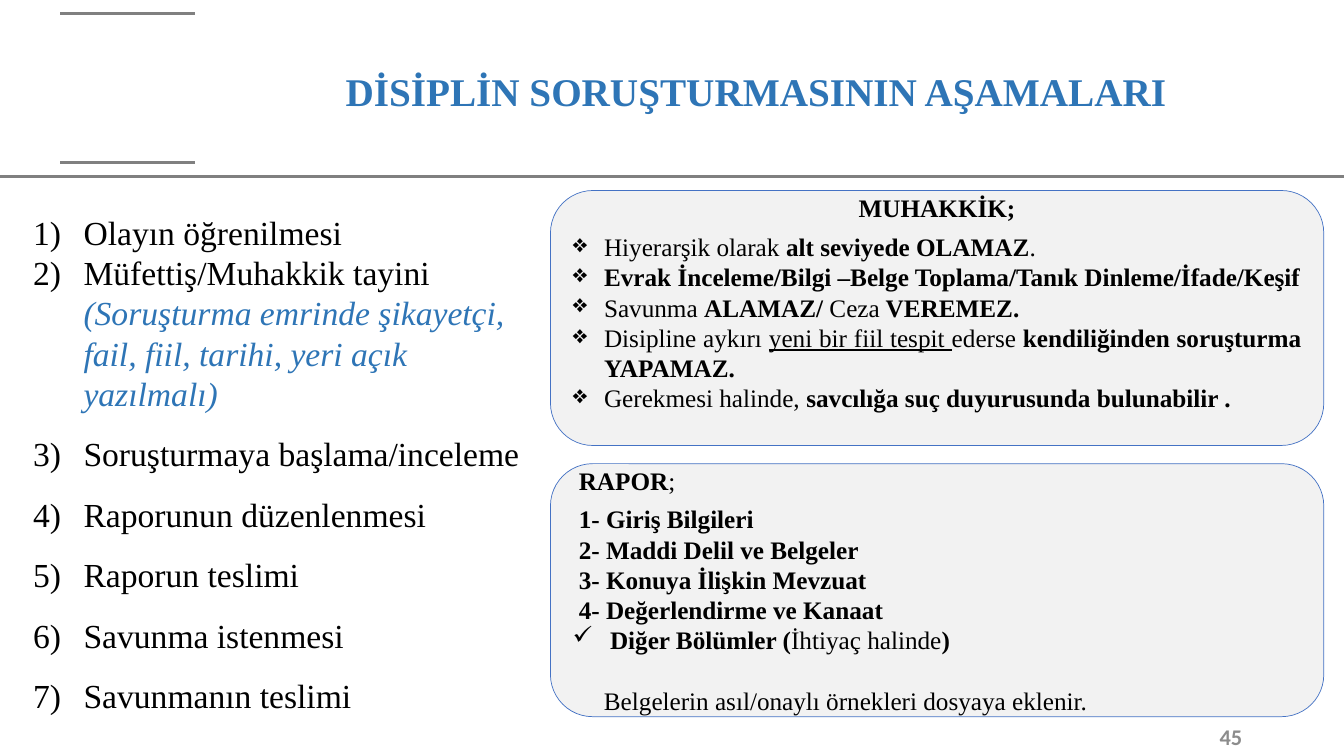
from lxml import etree
from pptx import Presentation
from pptx.dml.color import RGBColor
from pptx.enum.shapes import MSO_CONNECTOR, MSO_SHAPE
from pptx.enum.text import MSO_ANCHOR, PP_ALIGN
from pptx.oxml.ns import qn
from pptx.util import Inches, Pt

LEFT, CENTER, RIGHT, JUSTIFY = PP_ALIGN.LEFT, PP_ALIGN.CENTER, PP_ALIGN.RIGHT, PP_ALIGN.JUSTIFY
MIDDLE = MSO_ANCHOR.MIDDLE
ROUNDED = MSO_SHAPE.ROUNDED_RECTANGLE
STRAIGHT = MSO_CONNECTOR.STRAIGHT
SERIF, SANS = "Times New Roman", "Calibri"
COLORS = {"rule": "808080", "accent": "2E75B6", "text": "000000",
          "panel": "F2F2F2", "border": "4472C4", "number": "8C8C8C"}

STAGES = [
    [("Olayın öğrenilmesi", "")],
    [("Müfettiş/Muhakkik tayini ", ""),
     ("(Soruşturma emrinde şikayetçi, fail, fiil, tarihi, yeri açık yazılmalı)", "i")],
    [("Soruşturmaya başlama/inceleme", "")],
    [("Raporunun düzenlenmesi", "")],
    [("Raporun teslimi", "")],
    [("Savunma istenmesi", "")],
    [("Savunmanın teslimi", "")],
]
INVESTIGATOR_RULES = [
    (LEFT, [("Hiyerarşik olarak ", ""), ("alt seviyede OLAMAZ", "b"), (".", "")]),
    (LEFT, [("Evrak İnceleme/Bilgi –Belge Toplama/Tanık Dinleme/İfade/Keşif", "b")]),
    (LEFT, [("Savunma ", ""), ("ALAMAZ/ ", "b"), ("Ceza", ""), (" VEREMEZ.", "b")]),
    (JUSTIFY, [("Disipline aykırı ", ""), ("yeni bir fiil tespit ", "u"), ("ederse ", ""),
               ("kendiliğinden soruşturma YAPAMAZ.", "b")]),
    (JUSTIFY, [("Gerekmesi halinde, ", ""),
               ("savcılığa suç duyurusunda bulunabilir .", "b")]),
]
REPORT_PARTS = ["1- Giriş Bilgileri", "2- Maddi Delil ve Belgeler",
                "3- Konuya İlişkin Mevzuat", "4- Değerlendirme ve Kanaat"]


def color(name):
    """Return the named colour."""
    return RGBColor.from_string(COLORS[name])


def style_run(run, size, color_name="text", style="", font=SERIF):
    """Format a run; style holds the letters b, i and u."""
    run.font.name = font
    run.font.size = Pt(size)
    run.font.bold = "b" in style
    run.font.italic = "i" in style
    run.font.underline = "u" in style
    run.font.color.rgb = color(color_name)


def add_paragraph(text_frame, parts, size, align=LEFT, margin=0, hanging=0, bullet=None):
    """Write styled parts into the next paragraph, with an optional bullet element."""
    first = text_frame.paragraphs[0]
    paragraph = text_frame.add_paragraph() if first.runs else first
    paragraph.alignment = align
    properties = paragraph._p.get_or_add_pPr()
    properties.set("marL", str(Inches(margin)))
    properties.set("indent", str(Inches(-hanging)))
    if bullet:
        tag, attributes = bullet
        etree.SubElement(properties, qn(tag), attributes)
    for text, style in parts:
        run = paragraph.add_run()
        run.text = text
        style_run(run, size, "accent" if "i" in style else "text", style)
    return paragraph


def add_rule(slide, left, top, width):
    """Draw a grey horizontal rule."""
    rule = slide.shapes.add_connector(STRAIGHT, Inches(left), Inches(top),
                                      Inches(left + width), Inches(top))
    rule.line.color.rgb = color("rule")
    rule.line.width = Pt(2.25)
    etree.SubElement(rule._element.spPr, qn("a:effectLst"))


def add_header(slide, left, top, width, height):
    """Place the title and the rules of the header band."""
    add_rule(slide, left, top + height, width)
    for offset in (0.13, 1.61):
        add_rule(slide, left + 0.6, top + offset, 1.33)
    title = slide.shapes.title
    title.left, title.top = Inches(left + 2.57), Inches(top + 0.4)
    title.width, title.height = Inches(9.85), Inches(1.06)
    text_frame = title.text_frame
    text_frame.text = "DİSİPLİN SORUŞTURMASININ AŞAMALARI"
    text_frame.vertical_anchor = MIDDLE
    paragraph = text_frame.paragraphs[0]
    paragraph.alignment = CENTER
    paragraph.line_spacing = 0.9
    style_run(paragraph.runs[0], 28, "accent", "b")


def add_stages(slide, left, top, width, height):
    """List the numbered stages."""
    box = slide.shapes.add_textbox(Inches(left), Inches(top), Inches(width), Inches(height))
    text_frame = box.text_frame
    text_frame.word_wrap = True
    numbering = ("a:buAutoNum", {"type": "arabicParenR"})
    for parts in STAGES:
        paragraph = add_paragraph(text_frame, parts, 24, margin=0.5, hanging=0.5,
                                  bullet=numbering)
        paragraph.line_spacing = 1.5 if len(parts) == 1 else 1.0


def add_panel(slide, left, top, width, height):
    """Draw a rounded panel and return its text frame."""
    panel = slide.shapes.add_shape(ROUNDED, Inches(left), Inches(top),
                                   Inches(width), Inches(height))
    panel.shadow.inherit = False
    panel.fill.solid()
    panel.fill.fore_color.rgb = color("panel")
    panel.line.color.rgb = color("border")
    panel.line.width = Pt(0.5)
    text_frame = panel.text_frame
    text_frame.word_wrap = True
    text_frame.vertical_anchor = MIDDLE
    return text_frame


def add_investigator_panel(slide, left, top, width, height):
    """Fill the panel on the investigator's limits."""
    text_frame = add_panel(slide, left, top, width, height)
    text_frame.margin_bottom = Inches(0.35)
    heading = add_paragraph(text_frame, [("MUHAKKİK;", "b")], 18, CENTER)
    heading.space_after = Pt(6)
    for align, parts in INVESTIGATOR_RULES:
        add_paragraph(text_frame, parts, 18, align, 0.31, 0.31,
                      ("a:buChar", {"char": "❖"}))


def add_report_panel(slide, left, top, width, height):
    """Fill the panel on the report's sections."""
    text_frame = add_panel(slide, left, top, width, height)
    heading = add_paragraph(text_frame, [("RAPOR", "b"), (";", "")], 18, margin=0.06)
    heading.space_after = Pt(6)
    for part in REPORT_PARTS:
        add_paragraph(text_frame, [(part, "b")], 18, margin=0.06)
    other = [("Diğer Bölümler (", "b"), ("İhtiyaç halinde", ""), (")", "b")]
    add_paragraph(text_frame, other, 18, margin=0.37, hanging=0.37,
                  bullet=("a:buChar", {"char": "✓"}))
    note = [("Belgelerin asıl/onaylı örnekleri dosyaya eklenir.", "")]
    add_paragraph(text_frame, note, 18, margin=0.31).space_before = Pt(21.6)


def add_page_number(slide, left, top, width, height):
    """Place the page number."""
    box = slide.shapes.add_textbox(Inches(left), Inches(top), Inches(width), Inches(height))
    text_frame = box.text_frame
    text_frame.word_wrap = True
    text_frame.vertical_anchor = MIDDLE
    text_frame.text = "45"
    paragraph = text_frame.paragraphs[0]
    paragraph.alignment = RIGHT
    style_run(paragraph.runs[0], 16, "number", "b", SANS)


def main():
    """Build and save the slide."""
    presentation = Presentation()
    presentation.slide_width = Inches(13.33)
    presentation.slide_height = Inches(7.5)
    slide = presentation.slides.add_slide(presentation.slide_layouts[5])
    add_header(slide, 0, 0, 13.33, 1.75)
    add_stages(slide, 0.23, 1.85, 5.02, 5.35)
    add_investigator_panel(slide, 5.46, 1.89, 7.67, 2.53)
    add_report_panel(slide, 5.46, 4.6, 7.67, 2.51)
    add_page_number(slide, 9.42, 7.11, 3, 0.4)
    presentation.save("out.pptx")


if __name__ == "__main__":
    main()
